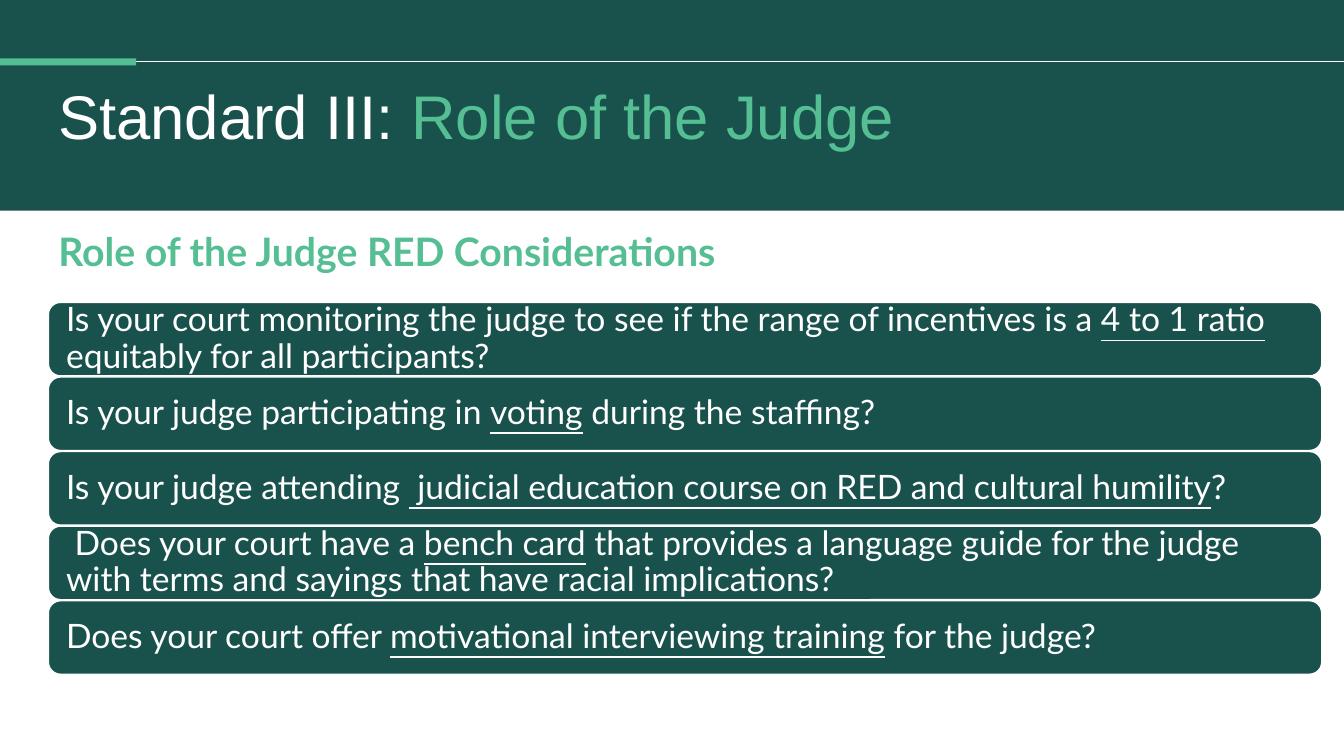
"""Build a slide on racial and ethnic considerations for the role of the judge."""
import pptx
import pptx.dml.color
import pptx.enum.shapes
import pptx.enum.text
import pptx.oxml
import pptx.oxml.ns
import pptx.util
from pptx.util import Inches

COLOURS = {"dark": "19524D", "accent": "55BE93", "white": "FFFFFF"}
SHAPES = pptx.enum.shapes.MSO_SHAPE
ANCHORS = pptx.enum.text.MSO_ANCHOR
LEFT = 0.48
QUESTION_TOP, QUESTION_STEP = 3, 0.74
QUESTIONS = [
    ("Is your court monitoring the judge to see if the range of incentives is a ",
     "4 to 1 ratio", " equitably for all participants?"),
    ("Is your judge participating in ", "voting", " during the staffing?"),
    ("Is your judge attending ",
     " judicial education course on RED and cultural humility", "?"),
    (" Does your court have a ", "bench card",
     " that provides a language guide for the judge with terms and sayings"
     " that have racial implications?"),
    ("Does your court offer ", "motivational interviewing training", " for the judge?"),
]


def colour(name):
    """Return the named colour."""
    return pptx.dml.color.RGBColor.from_string(COLOURS[name])


def add_panel(page, kind, left, top, width, height, fill, line=None):
    """Add a filled shape, with an outline if a line colour is given."""
    panel = page.shapes.add_shape(
        kind, Inches(left), Inches(top), Inches(width), Inches(height))
    panel.shadow.inherit = False
    panel.fill.solid()
    panel.fill.fore_color.rgb = colour(fill)
    if line:
        panel.line.color.rgb = colour(line)
        panel.line.width = pptx.util.Pt(1)
    else:
        panel.line.fill.background()
    return panel


def add_rule(page, left, right, height):
    """Add a thin white horizontal line."""
    rule = page.shapes.add_connector(
        pptx.enum.shapes.MSO_CONNECTOR.STRAIGHT,
        Inches(left), Inches(height), Inches(right), Inches(height))
    rule.line.color.rgb = colour("white")
    rule.line.width = pptx.util.Pt(0.5)
    rule._element.spPr.append(pptx.oxml.parse_xml(
        f"<a:effectLst {pptx.oxml.ns.nsdecls('a')}/>"))


def write(box, spans, font, size, anchor, bold=False):
    """Write spans of (text, colour, underline) as one paragraph."""
    frame = box.text_frame
    frame.word_wrap = True
    frame.vertical_anchor = anchor
    para = frame.paragraphs[0]
    para.alignment = pptx.enum.text.PP_ALIGN.LEFT
    para.line_spacing = 0.9
    for text, name, underline in spans:
        span = para.add_run()
        span.text = text
        span.font.name = font
        span.font.size = pptx.util.Pt(size)
        span.font.bold = bold
        span.font.underline = underline
        span.font.color.rgb = colour(name)


def add_heading(page, top, width, spans, font, size, bold=False):
    """Add a heading at the left margin."""
    box = page.shapes.add_textbox(
        Inches(LEFT), Inches(top), Inches(width), Inches(0.93))
    write(box, spans, font, size, ANCHORS.TOP, bold)


def add_question(page, top, question):
    """Add a rounded bar holding a question with its key term underlined."""
    bar = add_panel(page, SHAPES.ROUNDED_RECTANGLE, LEFT, top, 12.63, 0.73,
                    "dark", "white")
    frame = bar.text_frame
    frame.margin_left = frame.margin_right = Inches(0.14)
    frame.margin_top = frame.margin_bottom = Inches(0.1)
    before, term, after = question
    spans = [(before, "white", False), (term, "white", True), (after, "white", False)]
    write(bar, spans, "Lato", 24, ANCHORS.MIDDLE)


def main():
    """Build and save the slide."""
    deck = pptx.Presentation()
    deck.slide_width, deck.slide_height = Inches(13.33), Inches(7.5)
    page = deck.slides.add_slide(deck.slide_layouts[6])
    add_panel(page, SHAPES.RECTANGLE, 0, 0, 13.33, 2.09, "dark")
    add_rule(page, 0, 13.33, 0.61)
    add_panel(page, SHAPES.RECTANGLE, 0, 0.58, 1.35, 0.07, "accent")
    add_heading(page, 0.81, 11.42, [("Standard III: ", "white", False),
                                    ("Role of the Judge", "accent", False)], "Arial", 44)
    add_heading(page, 2.26, 11.14,
                [("Role of the Judge RED Considerations", "accent", False)],
                "Lato", 28, bold=True)
    for index, question in enumerate(QUESTIONS):
        add_question(page, QUESTION_TOP + index * QUESTION_STEP, question)
    deck.save("out.pptx")


if __name__ == "__main__":
    main()
